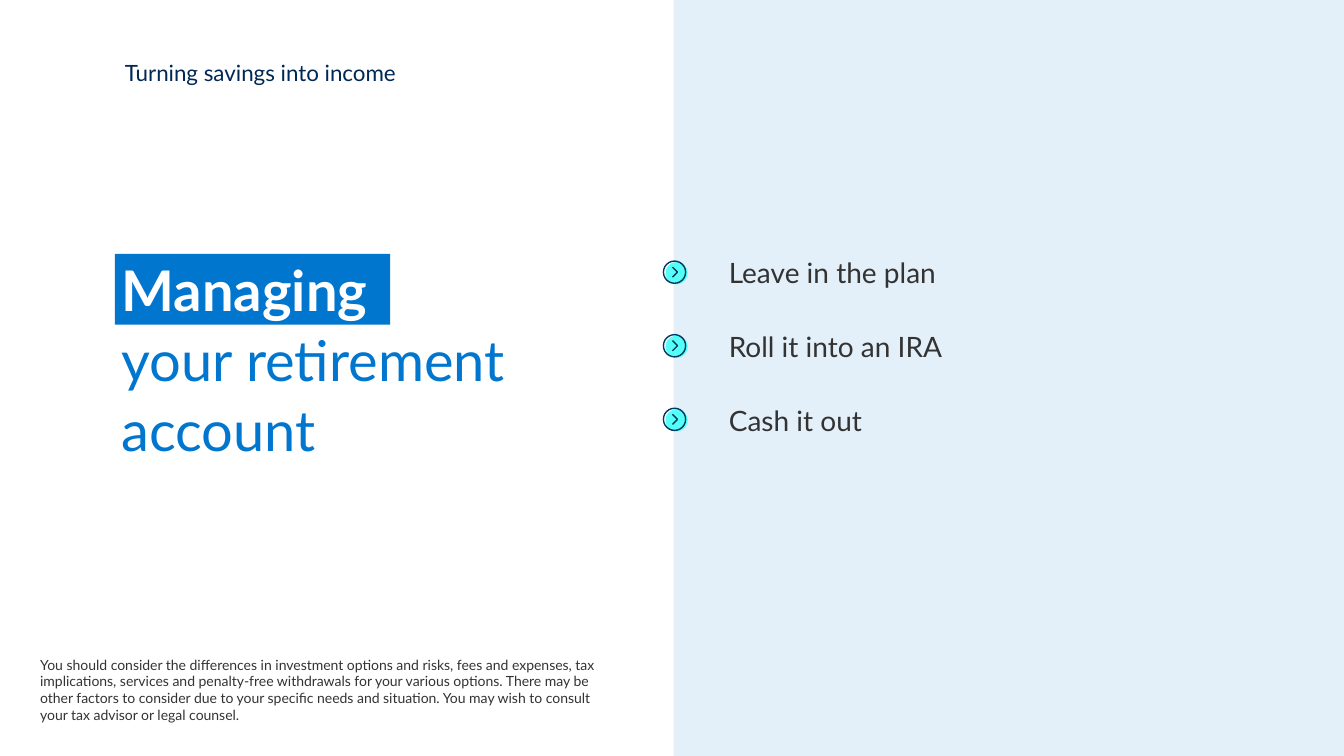
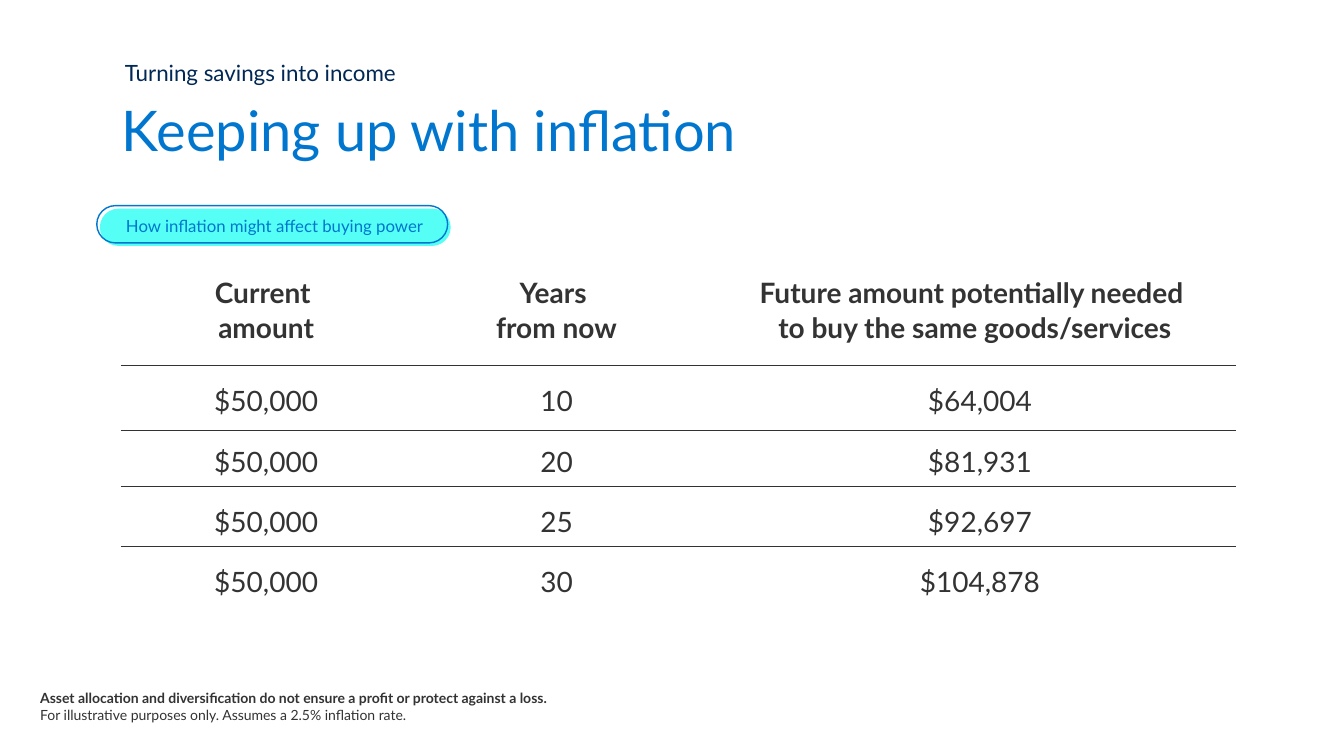
from pptx import Presentation
from pptx.dml.color import RGBColor
from pptx.enum.shapes import MSO_CONNECTOR as Connector, MSO_SHAPE as Preset
from pptx.enum.text import MSO_ANCHOR as Anchor, PP_ALIGN as Align
from pptx.oxml.ns import qn
from pptx.util import Inches, Pt
from lxml.etree import SubElement

FONT = "Lato"
COLORS = {
    "blue": "0076CF",
    "navy": "002855",
    "arrow": "003865",
    "aqua": "55FFF5",
    "pale": "E4F0F9",
    "text": "333333",
    "white": "FFFFFF",
}

# Each style: colour name, font values, paragraph values, left indent in inches
STYLES = {
    "eyebrow": ("navy", {"size": Pt(16)}, {}, 0),
    "title": ("blue", {"size": Pt(40)}, {"line_spacing": Pt(50)}, 0),
    "list": ("text", {"size": Pt(20)},
             {"line_spacing": Pt(25), "space_after": Pt(28)}, 0.05),
    "note": ("text", {"size": Pt(10)}, {}, 0),
    "chip": ("blue", {"size": Pt(12)},
             {"alignment": Align.CENTER, "line_spacing": 1.1, "space_after": Pt(4)}, 0.05),
    "head": ("text", {"size": Pt(20), "bold": True},
             {"alignment": Align.CENTER, "line_spacing": Pt(25), "space_after": Pt(6)}, 0.1),
    "cell": ("text", {"size": Pt(20)},
             {"alignment": Align.CENTER, "line_spacing": 1.15, "space_after": Pt(6)}, 0.1),
}

OPTIONS = ["Leave in the plan", "Roll it into an IRA", "Cash it out"]
COLUMN_WIDTHS = [2.88, 2.88, 5.42]
ROW_HEIGHTS = [1.16, 0.6, 0.6, 0.6, 0.6]
INFLATION_ROWS = [
    ["Current \namount", "Years \nfrom now",
     "Future amount potentially needed \nto buy the same goods/services"],
    ["$50,000", "10", "$64,004"],
    ["$50,000", "20", "$81,931"],
    ["$50,000", "25", "$92,697"],
    ["$50,000", "30", "$104,878"],
]
RULE_TOPS = [3.62, 4.27, 4.83, 5.42]


def rgb(name):
    return RGBColor.from_string(COLORS[name])


def set_values(target, values):
    for name, value in values.items():
        setattr(target, name, value)


def write(frame, paragraphs, style):
    """Fill a frame; a paragraph is a string or a list of (text, colour, bold) spans."""
    color, font_values, para_values, indent = STYLES[style]
    bold = font_values.get("bold", False)
    for number, content in enumerate(paragraphs):
        para = frame.add_paragraph() if number else frame.paragraphs[0]
        set_values(para, para_values)
        if indent:
            para._p.get_or_add_pPr().set("marL", str(Inches(indent)))
        spans = [(content, color, bold)] if isinstance(content, str) else content
        for text, span_color, span_bold in spans:
            for position, line in enumerate(text.split("\n")):
                if position:
                    para.add_line_break()
                if line:
                    span = para.add_run()
                    span.text = line
                    set_values(span.font, {"name": FONT, **font_values, "bold": span_bold})
                    span.font.color.rgb = rgb(span_color)


def add_text(page, place, paragraphs, style):
    box = page.shapes.add_textbox(*map(Inches, place))
    box.text_frame.word_wrap = True
    write(box.text_frame, paragraphs, style)


def add_block(shapes, preset, place, fill=None, line=None):
    block = shapes.add_shape(preset, *map(Inches, place))
    block.shadow.inherit = False
    if fill:
        block.fill.solid()
        block.fill.fore_color.rgb = rgb(fill)
    else:
        block.fill.background()
    if line:
        block.line.color.rgb = rgb(line)
        block.line.width = Pt(1)
    else:
        block.line.fill.background()
    return block


def add_line(shapes, start, end, color, width):
    line = shapes.add_connector(Connector.STRAIGHT, *map(Inches, (*start, *end)))
    line.line.color.rgb = rgb(color)
    line.line.width = Pt(width)
    SubElement(line._element.spPr, qn("a:effectLst"))


def add_arrow_bullet(page, left, top):
    """Aqua disc with an offset ring and a chevron."""
    shapes = page.shapes.add_group_shape().shapes
    size = 0.22
    add_block(shapes, Preset.OVAL, (left + 0.02, top + 0.01, size, size), fill="aqua")
    tip = (left + 0.14, top + 0.11)
    for rise in (-0.05, 0.05):
        add_line(shapes, (tip[0] - 0.05, tip[1] + rise), tip, "arrow", 1)
    add_block(shapes, Preset.OVAL, (left, top, size, size), line="arrow")


def add_chip(page, left, top, label):
    """Aqua pill with an offset outline and a label."""
    width, height, offset = 3.48, 0.37, 0.03
    pills = (((left + offset, top + offset), {"fill": "aqua"}), ((left, top), {"line": "blue"}))
    for corner, look in pills:
        pill = add_block(page.shapes, Preset.ROUNDED_RECTANGLE, (*corner, width, height), **look)
        pill.adjustments[0] = 0.5
    add_text(page, (left - 0.14, top + offset, 3.76, 0.31), [label], "chip")


def add_table(page, left, top):
    frame = page.shapes.add_table(
        len(ROW_HEIGHTS), len(COLUMN_WIDTHS), Inches(left), Inches(top),
        Inches(sum(COLUMN_WIDTHS)), Inches(sum(ROW_HEIGHTS)))
    table = frame.table
    set_values(table, {"first_row": False, "horz_banding": False})
    for column, width in zip(table.columns, COLUMN_WIDTHS):
        column.width = Inches(width)
    for row, height in zip(table.rows, ROW_HEIGHTS):
        row.height = Inches(height)
    for row_number, texts in enumerate(INFLATION_ROWS):
        for column_number, text in enumerate(texts):
            cell = table.cell(row_number, column_number)
            is_future_amount = row_number > 0 and column_number == 2
            set_values(cell, {
                "margin_left": 0, "margin_top": 0, "margin_bottom": 0,
                "margin_right": Inches(0 if is_future_amount else 0.1),
                "vertical_anchor": Anchor.MIDDLE,
            })
            if row_number:
                cell.fill.background()
            else:
                cell.fill.solid()
                cell.fill.fore_color.rgb = rgb("white")
            write(cell.text_frame, [text], "cell" if row_number else "head")


def add_page(deck):
    """Blank white page with the section name on top."""
    page = deck.slides.add_slide(deck.slide_layouts[6])
    page.background.fill.solid()
    page.background.fill.fore_color.rgb = rgb("white")
    add_text(page, (1.14, 0.54, 3.84, 0.58), ["Turning savings into income"], "eyebrow")
    return page


def build_account_page(deck):
    page = add_page(deck)
    add_block(page.shapes, Preset.RECTANGLE, (1.14, 2.52, 2.73, 0.7), fill="blue")
    add_block(page.shapes, Preset.RECTANGLE, (6.68, 0, 6.65, 7.5), fill="pale")
    title = [("Managing \n", "white", True), ("your retirement account", "blue", False)]
    add_text(page, (1.11, 2.46, 4.2, 0.94), [title], "title")
    add_text(page, (7.08, 2.47, 4.28, 3.25), OPTIONS, "list")
    for number in range(len(OPTIONS)):
        add_arrow_bullet(page, 6.58, 2.59 + 0.73 * number)
    add_text(page, (0.3, 6.46, 5.74, 0.77), [
        "You should consider the differences in investment options and risks, fees and "
        "expenses, tax implications, services and penalty-free withdrawals for your various "
        "options. There may be other factors to consider due to your specific needs and "
        "situation. You may wish to consult your tax advisor or legal counsel."], "note")


def build_inflation_page(deck):
    page = add_page(deck)
    add_table(page, 1.2, 2.49)
    add_text(page, (1.11, 0.87, 9.66, 0.94), ["Keeping up with inflation"], "title")
    add_text(page, (0.3, 6.79, 10.24, 0.44), [
        [("Asset allocation and diversification do not ensure a profit "
          "or protect against a loss.", "text", True)],
        "For illustrative purposes only. Assumes a 2.5% inflation rate."], "note")
    add_chip(page, 0.96, 2.04, "How inflation might affect buying power")
    for top in RULE_TOPS:
        add_line(page.shapes, (1.2, top), (12.26, top), "text", 0.5)


def main():
    deck = Presentation()
    set_values(deck, {"slide_width": Inches(13.33), "slide_height": Inches(7.5)})
    build_account_page(deck)
    build_inflation_page(deck)
    deck.save("out.pptx")


if __name__ == "__main__":
    main()
